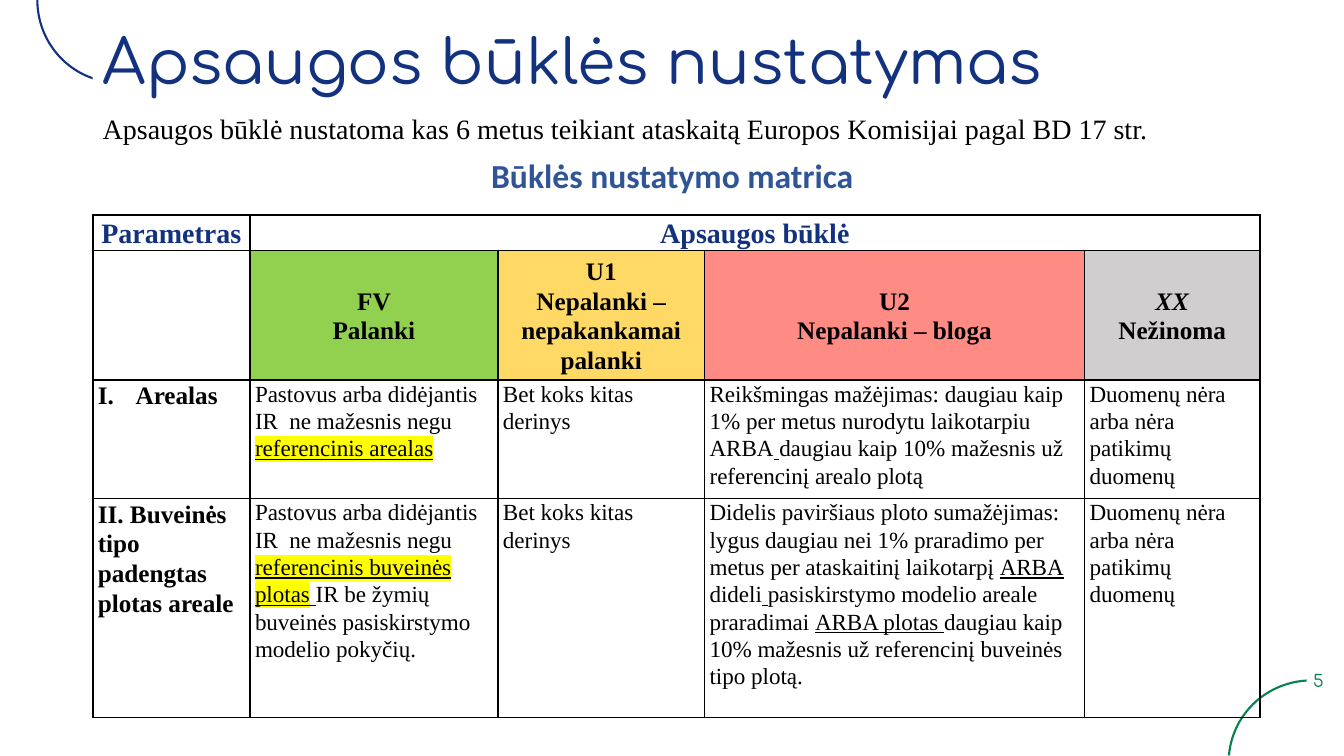
import pptx
import pptx.util
import pptx.dml.color
import pptx.enum.shapes
import pptx.enum.text
import pptx.oxml
import pptx.oxml.ns
import lxml.etree

Pt = pptx.util.Pt
RGBColor = pptx.dml.color.RGBColor
ALIGN = pptx.enum.text.PP_ALIGN
ANCHOR = pptx.enum.text.MSO_ANCHOR
qn = pptx.oxml.ns.qn

NAVY = RGBColor(0x12, 0x31, 0x7F)
BLUE = RGBColor(0x2F, 0x55, 0x97)
GREEN = RGBColor(0x05, 0x82, 0x4E)
BLACK = RGBColor(0, 0, 0)
WHITE = RGBColor(255, 255, 255)
YELLOW = RGBColor(255, 255, 0)
FAVOURABLE = RGBColor(0x92, 0xD0, 0x50)
INADEQUATE = RGBColor(0xFF, 0xD9, 0x66)
BAD = RGBColor(0xFF, 0x8B, 0x85)
UNKNOWN = RGBColor(0xD0, 0xCE, 0xCE)
SERIF = "Times New Roman"


def set_font(paragraph, name, size, color, bold=False):
    paragraph.font.name = name
    paragraph.font.size = Pt(size)
    paragraph.font.color.rgb = color
    paragraph.font.bold = bold


def set_border(cell, side, width):
    line = lxml.etree.SubElement(cell._tc.get_or_add_tcPr(), qn(f"a:ln{side}"), w=str(Pt(width)))
    fill = lxml.etree.SubElement(line, qn("a:solidFill"))
    lxml.etree.SubElement(fill, qn("a:srgbClr"), val=str(BLACK))


deck = pptx.Presentation()
deck.slide_width, deck.slide_height = Pt(960), Pt(540)
slide = deck.slides.add_slide(deck.slide_layouts[5])
shapes = slide.shapes

corner_arcs = [
    (26.64, -59.04, 180, (163.155, 0), NAVY),
    (878.4, 485.28, 270, (164.77, 214.034), GREEN),
]
for depth, (left, top, rotation, angles, color) in enumerate(corner_arcs):
    arc = shapes.add_shape(pptx.enum.shapes.MSO_SHAPE.ARC, Pt(left), Pt(top), Pt(116.64), Pt(118.08))
    arc.rotation = rotation
    arc.adjustments[0], arc.adjustments[1] = angles
    arc.shadow.inherit = False
    arc.fill.background()
    arc.line.color.rgb = color
    arc.line.width = Pt(1.5)
    shapes._spTree.insert(2 + depth, arc._element)

title = shapes.title
title.left, title.top, title.width, title.height = Pt(66.24), Pt(14.4), Pt(828), Pt(64.08)
title.fill.solid()
title.fill.fore_color.rgb = WHITE
title.text_frame.text = "Apsaugos būklės nustatymas"
title.text_frame.auto_size = pptx.enum.text.MSO_AUTO_SIZE.NONE
title.text_frame.vertical_anchor = ANCHOR.MIDDLE
heading = title.text_frame.paragraphs[0]
heading.alignment = ALIGN.LEFT
heading.line_spacing = 0.9
set_font(heading, "Comfortaa", 44, NAVY)

intro = shapes.add_textbox(Pt(66.24), Pt(78.48), Pt(828), Pt(67.68)).text_frame
intro.word_wrap = True
intro.text = (
    "Apsaugos būklė nustatoma kas 6 metus teikiant ataskaitą Europos Komisijai pagal BD 17 str.\n"
    "Būklės nustatymo matrica"
)
for paragraph in intro.paragraphs:
    paragraph.line_spacing = 0.9
    paragraph.space_before = Pt(10)
statement, matrix_heading = intro.paragraphs
set_font(statement, SERIF, 20, BLACK)
set_font(matrix_heading, "Calibri", 24, BLUE, True)
matrix_heading.alignment = ALIGN.CENTER

page = shapes.add_textbox(Pt(736.56), Pt(471.6), Pt(216), Pt(28.8)).text_frame
page.word_wrap = True
page.vertical_anchor = ANCHOR.MIDDLE
page.text = "5"
page.paragraphs[0].alignment = ALIGN.RIGHT
set_font(page.paragraphs[0], "Comfortaa", 12, GREEN)

other = [[("Bet koks kitas derinys", "")]]
no_data = [[("Duomenų nėra arba nėra patikimų duomenų", "")]]
stable = ("Pastovus arba didėjantis IR  ne mažesnis negu ", "")
matrix_rows = [
    [[[("Parametras", "")]], [[("Apsaugos būklė", "")]], [], [], []],
    [
        [],
        [[("FV", "")], [("Palanki", "")]],
        [[("U1", "")], [("Nepalanki – nepakankamai palanki", "")]],
        [[("U2", "")], [("Nepalanki – bloga", "")]],
        [[("XX", "i")], [("Nežinoma", "")]],
    ],
    [
        [[("Arealas", "")]],
        [[stable, ("referencinis arealas", "uh")]],
        other,
        [[
            ("Reikšmingas mažėjimas: daugiau kaip 1% per metus nurodytu laikotarpiu ARBA", ""),
            (" ", "u"),
            ("daugiau kaip 10% mažesnis už referencinį arealo plotą", ""),
        ]],
        no_data,
    ],
    [
        [[("II. Buveinės tipo padengtas plotas areale", "")]],
        [[
            stable,
            ("referencinis buveinės plotas", "uh"),
            (" ", "u"),
            ("IR be žymių buveinės pasiskirstymo modelio pokyčių.", ""),
        ]],
        other,
        [[
            ("Didelis paviršiaus ploto sumažėjimas: lygus daugiau nei 1% praradimo per metus "
             "per ataskaitinį laikotarpį ", ""),
            ("ARBA", "u"),
            (" dideli", ""),
            (" ", "u"),
            ("pasiskirstymo modelio areale praradimai ", ""),
            ("ARBA plotas ", "u"),
            ("daugiau kaip 10% mažesnis už referencinį buveinės tipo plotą.", ""),
        ]],
        no_data,
    ],
]
status_fills = [None, FAVOURABLE, INADEQUATE, BAD, UNKNOWN]

matrix = shapes.add_table(4, 5, Pt(66.24), Pt(153.36), Pt(834.48), Pt(337.68)).table
matrix.first_row = matrix.horz_banding = False
for column, width in zip(matrix.columns, (112.32, 177.12, 147.6, 271.44, 125.28)):
    column.width = Pt(width)
for row, height in zip(matrix.rows, (18.72, 80.64, 82.08, 156.24)):
    row.height = Pt(height)
matrix.cell(0, 1).merge(matrix.cell(0, 4))

for r, contents in enumerate(matrix_rows):
    for c, paragraphs in enumerate(contents):
        cell = matrix.cell(r, c)
        cell.margin_left = cell.margin_right = Pt(3.6)
        cell.margin_top = cell.margin_bottom = 0
        cell.vertical_anchor = ANCHOR.MIDDLE if r < 2 else ANCHOR.TOP
        set_border(cell, "L", 1.5 if c == 0 else 1)
        set_border(cell, "R", 1.5 if c == 4 else 1)
        set_border(cell, "T", 1.5 if r in (0, 2) else 1)
        set_border(cell, "B", 1.5 if r == 1 else 1)
        status_fill = status_fills[c] if r == 1 else None
        if status_fill:
            cell.fill.solid()
            cell.fill.fore_color.rgb = status_fill
        else:
            cell.fill.background()
        for i, runs in enumerate(paragraphs):
            paragraph = cell.text_frame.paragraphs[0] if i == 0 else cell.text_frame.add_paragraph()
            paragraph.line_spacing = 1.07
            paragraph.alignment = ALIGN.CENTER if r < 2 else ALIGN.LEFT
            label = r < 2 or c == 0
            size = 20 if r == 0 else 18 if label else 16.5
            set_font(paragraph, SERIF, size, NAVY if r == 0 else BLACK, label)
            if r == 0 or c == 0:
                paragraph.space_after = Pt(8)
            for text, style in runs:
                run = paragraph.add_run()
                run.text = text
                if "u" in style:
                    run.font.underline = True
                if "i" in style:
                    run.font.italic = True
                if "h" in style:
                    highlight = lxml.etree.SubElement(run._r.get_or_add_rPr(), qn("a:highlight"))
                    lxml.etree.SubElement(highlight, qn("a:srgbClr"), val=str(YELLOW))

range_properties = matrix.cell(2, 0).text_frame.paragraphs[0]._p.get_or_add_pPr()
range_properties.set("marL", str(Pt(27)))
range_properties.set("indent", str(Pt(-27)))
numbering = pptx.oxml.parse_xml(
    '<a:buAutoNum xmlns:a="http://schemas.openxmlformats.org/drawingml/2006/main" type="romanUcPeriod"/>'
)
range_properties.find(qn("a:defRPr")).addprevious(numbering)

deck.save("out.pptx")
